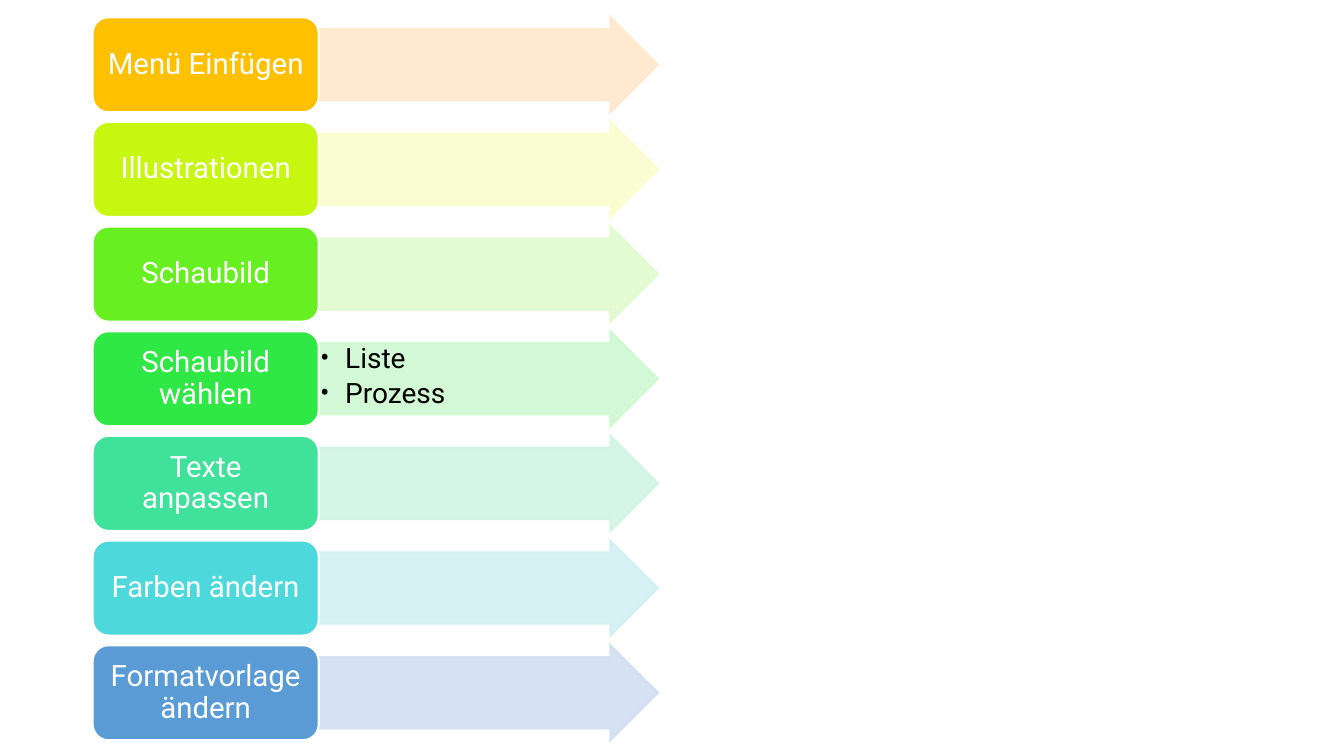
from pptx import Presentation
from pptx.dml.color import RGBColor
from pptx.enum.shapes import MSO_SHAPE
from pptx.enum.text import MSO_ANCHOR, PP_ALIGN
from pptx.oxml.ns import qn
from pptx.util import Pt
from lxml.etree import SubElement

WHITE = RGBColor(0xFF, 0xFF, 0xFF)
BLACK = RGBColor(0, 0, 0)
ORANGE, ORANGE_TINT = RGBColor(0xFF, 0xC0, 0x00), RGBColor(0xFF, 0xE8, 0xCC)
YELLOW, YELLOW_TINT = RGBColor(0xC7, 0xF7, 0x11), RGBColor(0xFA, 0xFD, 0xCD)
LIME, LIME_TINT = RGBColor(0x67, 0xEF, 0x21), RGBColor(0xE1, 0xFA, 0xCE)
GREEN, GREEN_TINT = RGBColor(0x30, 0xE8, 0x45), RGBColor(0xCF, 0xF8, 0xD1)
MINT, MINT_TINT = RGBColor(0x3F, 0xE1, 0x9B), RGBColor(0xD0, 0xF5, 0xE5)
CYAN, CYAN_TINT = RGBColor(0x4D, 0xD8, 0xDB), RGBColor(0xD1, 0xF0, 0xF2)
BLUE, BLUE_TINT = RGBColor(0x5B, 0x9B, 0xD5), RGBColor(0xD2, 0xDF, 0xF0)

STEPS = [
    ("Menü Einfügen", ORANGE, ORANGE_TINT, []),
    ("Illustrationen", YELLOW, YELLOW_TINT, []),
    ("Schaubild", LIME, LIME_TINT, []),
    ("Schaubild wählen", GREEN, GREEN_TINT, ["Liste", "Prozess"]),
    ("Texte anpassen", MINT, MINT_TINT, []),
    ("Farben ändern", CYAN, CYAN_TINT, []),
    ("Formatvorlage ändern", BLUE, BLUE_TINT, []),
]

BOX_LEFT, BOX_WIDTH = 66.2, 161.5
ARROW_LEFT, ARROW_WIDTH = BOX_LEFT + BOX_WIDTH, 242.3
FIRST_TOP, ROW_HEIGHT, ROW_PITCH = 12.3, 67.9, 74.76


def write(frame, lines, *, size, color, font, align, anchor, margins,
          space_after=0, bullet_indent=0):
    """Fill a text frame with one paragraph per line, bulleted if indented."""
    frame.word_wrap = True
    frame.vertical_anchor = anchor
    frame.margin_left = frame.margin_right = Pt(margins[0])
    frame.margin_top = frame.margin_bottom = Pt(margins[1])
    for index, line in enumerate(lines):
        para = frame.add_paragraph() if index else frame.paragraphs[0]
        para.alignment = align
        para.line_spacing = 0.9
        para.space_after = Pt(space_after)
        span = para.add_run()
        span.text = line
        span.font.size = Pt(size)
        span.font.name = font
        span.font.color.rgb = color
        if bullet_indent:
            properties = para._p.get_or_add_pPr()
            properties.set("marL", str(Pt(bullet_indent)))
            properties.set("indent", str(-Pt(bullet_indent)))
            SubElement(properties, qn("a:buFont")).set("typeface", font)
            SubElement(properties, qn("a:buChar")).set("char", "•")


class StepList:
    font = "Roboto"
    line_width = 1.5
    opacity = 90

    def __init__(self, slide):
        self.slide = slide

    def shape(self, kind, left, top, width, fill, line):
        shape = self.slide.shapes.add_shape(
            kind, Pt(left), Pt(top), Pt(width), Pt(ROW_HEIGHT))
        shape.shadow.inherit = False
        shape.fill.solid()
        shape.fill.fore_color.rgb = fill
        shape.line.color.rgb = line
        shape.line.width = Pt(self.line_width)
        outline = shape._element.spPr.find(qn("a:ln"))
        SubElement(outline, qn("a:miter")).set("lim", "800000")
        return shape

    def arrow(self, top, color, items):
        arrow = self.shape(MSO_SHAPE.RIGHT_ARROW, ARROW_LEFT, top,
                           ARROW_WIDTH, color, color)
        arrow.adjustments[0] = 0.75
        arrow.adjustments[1] = 0.5
        for tone in arrow._element.spPr.iter(qn("a:srgbClr")):
            SubElement(tone, qn("a:alpha")).set("val", str(self.opacity * 1000))
        if items:
            write(arrow.text_frame, items, size=20, color=BLACK, font=self.font,
                  align=PP_ALIGN.LEFT, anchor=MSO_ANCHOR.TOP,
                  margins=(0.9, 0.9), space_after=3.5, bullet_indent=18)

    def box(self, top, color, label):
        box = self.shape(MSO_SHAPE.ROUNDED_RECTANGLE, BOX_LEFT, top,
                         BOX_WIDTH, color, WHITE)
        write(box.text_frame, [label], size=21, color=WHITE, font=self.font,
              align=PP_ALIGN.CENTER, anchor=MSO_ANCHOR.MIDDLE, margins=(6.3, 3.2))


def main():
    deck = Presentation()
    deck.slide_width, deck.slide_height = Pt(960), Pt(540)
    page = StepList(deck.slides.add_slide(deck.slide_layouts[6]))
    for row, (label, color, tint, items) in enumerate(STEPS):
        top = FIRST_TOP + row * ROW_PITCH
        page.arrow(top, tint, items)
        page.box(top, color, label)
    deck.save("out.pptx")


if __name__ == "__main__":
    main()
